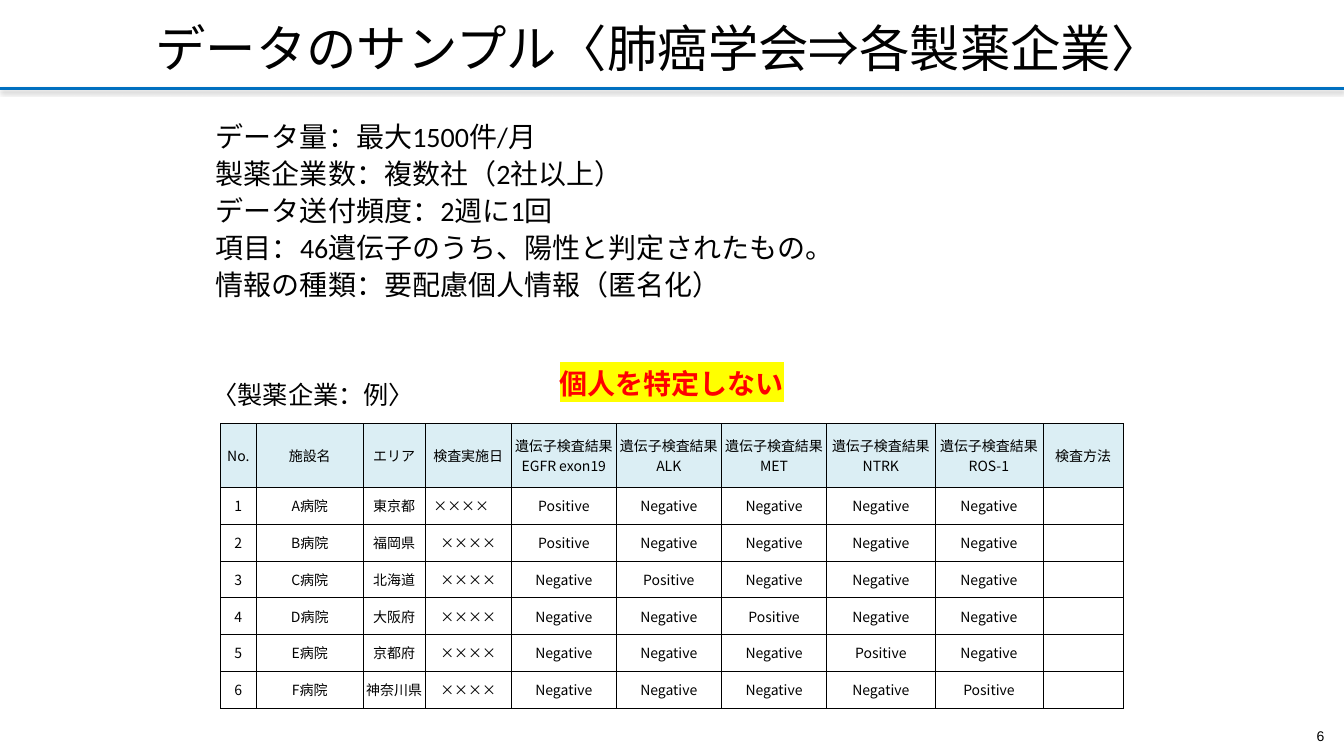
from lxml.etree import SubElement
from pptx import Presentation
from pptx.dml.color import RGBColor
from pptx.enum.shapes import MSO_CONNECTOR
from pptx.enum.text import MSO_ANCHOR as Anchor, MSO_AUTO_SIZE, PP_ALIGN as Align
from pptx.oxml.ns import qn
from pptx.util import Pt

COLORS = {
    "text": "000000",
    "rule": "0070C0",
    "header": "DBEEF4",
    "warning": "FF0000",
    "marker": "FFFF00",
}
NOTO = "Noto Sans CJK JP"
SLIDE_WIDTH, SLIDE_HEIGHT = 960, 540

SUMMARY = """データ量：最大1500件/月
製薬企業数：複数社（2社以上）
データ送付頻度：2週に1回
項目：46遺伝子のうち、陽性と判定されたもの。
情報の種類：要配慮個人情報（匿名化）"""

GENES = ["EGFR exon19", "ALK", "MET", "NTRK", "ROS-1"]
# Facility, area, test date, positive gene
PATIENTS = [
    ("A病院", "東京都", "××××　", "EGFR exon19"),
    ("B病院", "福岡県", "××××", "EGFR exon19"),
    ("C病院", "北海道", "××××", "ALK"),
    ("D病院", "大阪府", "××××", "MET"),
    ("E病院", "京都府", "××××", "NTRK"),
    ("F病院", "神奈川県", "××××", "ROS-1"),
]
COLUMN_WIDTHS = [25.7, 76.3, 44.2, 61.7, 75, 75, 75.4, 77.2, 77.2, 57.4]
HEADER_HEIGHT, ROW_HEIGHT = 45.7, 26.3


def rgb(color):
    return RGBColor.from_string(COLORS[color])


def add_color(parent, color):
    return SubElement(parent, qn("a:srgbClr"), val=COLORS[color])


def write_text(frame, text, *, size, font=NOTO, color="text", bold=False,
               align=Align.LEFT, spacing=1.0, marker=None):
    """Fill a text frame, one paragraph for each line of text."""
    for index, line in enumerate(text.split("\n")):
        paragraph = frame.paragraphs[0] if index == 0 else frame.add_paragraph()
        paragraph.alignment = align
        paragraph.line_spacing = spacing
        paragraph.space_before = Pt(0)
        run = paragraph.add_run()
        run.text = line
        run.font.size = Pt(size)
        run.font.bold = bold
        run.font.color.rgb = rgb(color)
        run_format = run.font._element
        if marker:
            add_color(SubElement(run_format, qn("a:highlight")), marker)
        run.font.name = font
        SubElement(run_format, qn("a:ea"), typeface=font)


def set_frame(frame, anchor=Anchor.TOP, side=7.2, vertical=3.6):
    frame.word_wrap = True
    frame.auto_size = MSO_AUTO_SIZE.NONE
    frame.vertical_anchor = anchor
    frame.margin_left = frame.margin_right = Pt(side)
    frame.margin_top = frame.margin_bottom = Pt(vertical)
    return frame


def place(shape, left, top, width, height):
    shape.left, shape.top = Pt(left), Pt(top)
    shape.width, shape.height = Pt(width), Pt(height)


def add_label(slide, text, left, top, width, height, *,
              anchor=Anchor.TOP, side=7.2, vertical=3.6, **text_format):
    label = slide.shapes.add_textbox(Pt(left), Pt(top), Pt(width), Pt(height))
    write_text(set_frame(label.text_frame, anchor, side, vertical), text, **text_format)


def add_summary(slide):
    summary = slide.placeholders[1]
    place(summary, 147, 79.2, 631.4, 165.6)
    frame = set_frame(summary.text_frame)
    write_text(frame, SUMMARY, size=20, font="Calibri", spacing=1.1)
    for paragraph in frame.paragraphs:
        properties = paragraph._p.get_or_add_pPr()
        properties.set("marL", "0")
        properties.set("indent", "0")
        SubElement(properties, qn("a:buNone"))


def add_title_rule(slide, top):
    rule = slide.shapes.add_connector(
        MSO_CONNECTOR.STRAIGHT, Pt(0), Pt(top), Pt(SLIDE_WIDTH), Pt(top))
    rule.line.color.rgb = rgb("rule")
    rule.line.width = Pt(2.25)
    effects = SubElement(rule._element.spPr, qn("a:effectLst"))
    shadow = SubElement(effects, qn("a:outerShdw"), blurRad=str(Pt(3.1)),
                        dist=str(Pt(1.6)), dir="5400000", rotWithShape="0")
    SubElement(add_color(shadow, "text"), qn("a:alpha"), val="38000")


def format_cell(cell, text, is_header):
    cell.margin_left = cell.margin_right = cell.margin_top = cell.margin_bottom = 0
    cell.vertical_anchor = Anchor.MIDDLE
    # Borders come before the fill in the cell properties
    for side in ("a:lnL", "a:lnR", "a:lnT", "a:lnB"):
        border = SubElement(cell._tc.get_or_add_tcPr(), qn(side), w=str(Pt(0.5)))
        add_color(SubElement(border, qn("a:solidFill")), "text")
    if is_header:
        cell.fill.solid()
        cell.fill.fore_color.rgb = rgb("header")
    else:
        cell.fill.background()
    if text:
        write_text(cell.text_frame, text, size=10, align=Align.CENTER)


def add_results_table(slide, left, top):
    header = ["No.", "施設名", "エリア", "検査実施日",
              *(f"遺伝子検査結果\n{gene}" for gene in GENES), "検査方法"]
    rows = [header]
    for number, (facility, area, date, positive) in enumerate(PATIENTS, 1):
        results = ["Positive" if gene == positive else "Negative" for gene in GENES]
        rows.append([str(number), facility, area, date, *results, ""])

    height = HEADER_HEIGHT + ROW_HEIGHT * len(PATIENTS)
    results_table = slide.shapes.add_table(
        len(rows), len(header), Pt(left), Pt(top),
        Pt(sum(COLUMN_WIDTHS)), Pt(height)).table
    results_table.first_row = results_table.horz_banding = False
    for column, width in zip(results_table.columns, COLUMN_WIDTHS):
        column.width = Pt(width)
    for row_index, texts in enumerate(rows):
        is_header = row_index == 0
        row = results_table.rows[row_index]
        row.height = Pt(HEADER_HEIGHT if is_header else ROW_HEIGHT)
        for cell, text in zip(row.cells, texts):
            format_cell(cell, text, is_header)


def main():
    deck = Presentation()
    deck.slide_width, deck.slide_height = Pt(SLIDE_WIDTH), Pt(SLIDE_HEIGHT)
    slide = deck.slides.add_slide(deck.slide_layouts[1])

    # Title and the rule below it
    title = slide.shapes.title
    place(title, 103.7, 12, 752.4, 34)
    write_text(set_frame(title.text_frame, vertical=0),
               "データのサンプル〈肺癌学会⇒各製薬企業〉", size=36)
    add_title_rule(slide, 63.4)

    # Outline of the data
    add_summary(slide)

    # Sample table with its caption and notice
    add_label(slide, "〈製薬企業：例〉", 144.7, 265, 178.6, 28.8, size=18, spacing=1.1)
    add_label(slide, "個人を特定しない", 384.5, 257.8, 190.8, 31.7,
              anchor=Anchor.MIDDLE, vertical=0, size=20, color="warning",
              bold=True, align=Align.CENTER, marker="marker")
    add_results_table(slide, 157.4, 302.4)

    # Slide number
    add_label(slide, "6", 933.8, 514, 12.2, 23.8, anchor=Anchor.MIDDLE, side=0,
              size=10, font="Arial", align=Align.RIGHT)

    deck.save("out.pptx")


if __name__ == "__main__":
    main()
